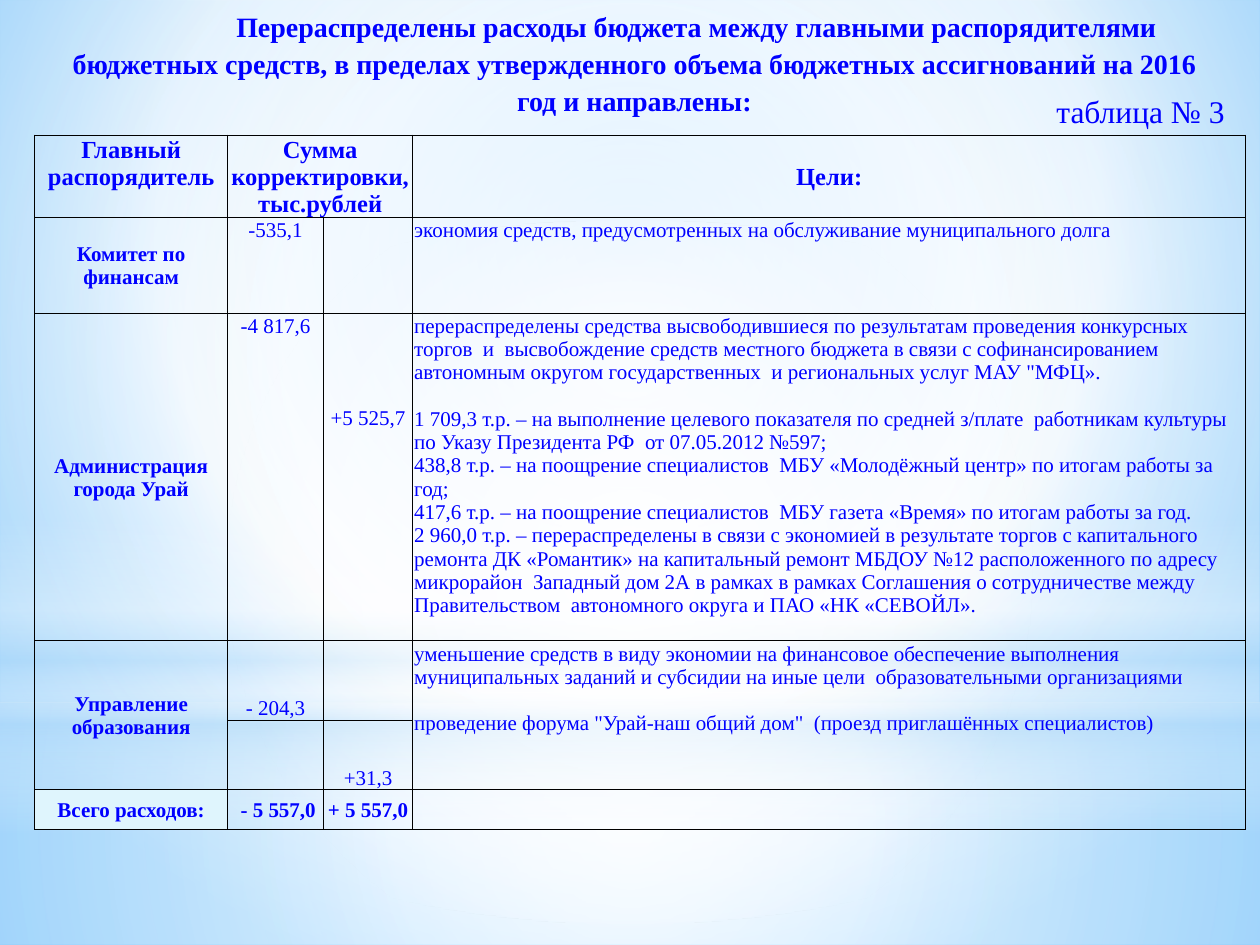
from lxml import etree
from pptx import Presentation
from pptx.dml.color import RGBColor
from pptx.enum import shapes, text
from pptx.oxml.ns import qn
from pptx.util import Cm, Pt

HUE = {"text": "0000FF", "line": "000000", "total": "DFF5FD", "white": "FFFFFF",
       "pale": "B4DCFA", "sky": "9ED5FF", "deep": "5BB9FF"}
BASE = {"name": "Times New Roman", "size": Pt(12), "bold": False}
TOP, MID, LOW = (text.MSO_ANCHOR.TOP, text.MSO_ANCHOR.MIDDLE,
                 text.MSO_ANCHOR.BOTTOM)
LEFT, MITTE, RIGHT = text.PP_ALIGN.LEFT, text.PP_ALIGN.CENTER, text.PP_ALIGN.RIGHT


def shade(fill, stops, rect=None):
    """Gradient with opacity per stop: round into rect, or downwards without it."""
    fill.gradient()
    grad = fill._xPr.find(qn("a:gradFill"))
    grad.clear()
    grad.set("rotWithShape", "1")
    gslst = etree.SubElement(grad, qn("a:gsLst"))
    for pos, hue, alpha in stops:
        stop = etree.SubElement(gslst, qn("a:gs"), pos=str(pos * 1000))
        clr = etree.SubElement(stop, qn("a:srgbClr"), val=HUE[hue])
        if alpha < 100:
            etree.SubElement(clr, qn("a:alpha"), val=str(alpha * 1000))
    if rect:
        way = etree.SubElement(grad, qn("a:path"))
        way.set("path", "circle")
        sides = {side: str(val * 1000) for side, val in zip("ltrb", rect)}
        etree.SubElement(way, qn("a:fillToRect"), **sides)
    else:
        etree.SubElement(grad, qn("a:lin"), ang="5400000", scaled="0")


def write(frame, lines, align, **style):
    """Write paragraphs; a line starting with a tuple gets space before it."""
    frame.word_wrap = True
    for num, line in enumerate(lines):
        para = frame.paragraphs[0] if num == 0 else frame.add_paragraph()
        para.alignment = align
        if isinstance(line, tuple):
            gap, line = line
            para.space_before = Pt(gap)
        run = para.add_run()
        run.text = line
        for key, val in {**BASE, **style}.items():
            setattr(run.font, key, val)
        run.font.color.rgb = RGBColor.from_string(HUE["text"])


deck = Presentation()
deck.slide_width, deck.slide_height = Cm(25.4), Cm(19.05)
slide = deck.slides.add_slide(deck.slide_layouts[5])

# Background and its light layers
shade(slide.background.fill,
      [(0, "sky", 100), (60, "white", 100), (100, "deep", 100)], (20, 10, 20, 60))
BOX, OVAL = shapes.MSO_SHAPE.RECTANGLE, shapes.MSO_SHAPE.OVAL
MIDDLE = (50, 50, 50, 50)
layers = [
    (BOX, 14.17, 4.88, MIDDLE,
     [(0, "white", 91), (37, "white", 76), (100, "pale", 79)]),
    (BOX, 0, 14.17, MIDDLE,
     [(0, "white", 89), (48, "white", 62), (100, "pale", 79)]),
    (BOX, 10.46, 6.35, None,
     [(0, "white", 0), (29, "white", 30), (45, "pale", 40),
      (55, "white", 26), (65, "pale", 60), (100, "white", 0)]),
    (OVAL, 4.45, 14.17, MIDDLE, [(0, "white", 100), (56, "white", 0)]),
]
for kind, top, high, rect, stops in layers:
    layer = slide.shapes.add_shape(kind, 0, Cm(top), deck.slide_width, Cm(high))
    layer.shadow.inherit = False
    layer.line.fill.background()
    shade(layer.fill, stops, rect)

# Table grid
cols = [3.89, 1.93, 1.8, 16.79]
rows = [1.65, 1.92, 6.61, 1.6, 1.4, 0.76]
grid = slide.shapes.add_table(len(rows), len(cols), Cm(0.7), Cm(2.72),
                              Cm(sum(cols)), Cm(sum(rows))).table
grid.first_row = grid.horz_banding = False
for col, wide in zip(grid.columns, cols):
    col.width = Cm(wide)
for row, high in zip(grid.rows, rows):
    row.height = Cm(high)
for cell in grid.iter_cells():
    for side in ("left", "right", "top"):
        setattr(cell, "margin_" + side, Cm(0.03))
    cell.margin_bottom = 0
    cell.fill.background()
    props = cell._tc.get_or_add_tcPr()
    for spot, tag in enumerate(("a:lnL", "a:lnR", "a:lnT", "a:lnB")):
        edge = etree.Element(qn(tag), w=str(Pt(0.5)))
        ink = etree.SubElement(edge, qn("a:solidFill"))
        etree.SubElement(ink, qn("a:srgbClr"), val=HUE["line"])
        props.insert(spot, edge)
for first, last in (((0, 1), (0, 2)), ((3, 0), (4, 0)), ((3, 3), (4, 3))):
    grid.cell(*first).merge(grid.cell(*last))
total = grid.cell(5, 0).fill
total.solid()
total.fore_color.rgb = RGBColor.from_string(HUE["total"])

# Headings, names and sums: row, column, anchor, size, bold, text
marks = [
    (0, 0, TOP, 14, True, "Главный распорядитель"),
    (0, 1, MID, 14, True, "Сумма корректировки, тыс.рублей"),
    (0, 3, MID, 14, True, "Цели:"),
    (1, 0, MID, 12, True, "Комитет по финансам"),
    (1, 1, TOP, 12, False, "-535,1"),
    (2, 0, MID, 12, True, "Администрация города Урай"),
    (2, 1, TOP, 12, False, "-4 817,6"),
    (2, 2, TOP, 12, False, "+5 525,7"),
    (3, 0, MID, 12, True, "Управление образования"),
    (3, 1, LOW, 12, False, "- 204,3"),
    (4, 2, LOW, 12, False, "+31,3"),
    (5, 0, MID, 12, True, "Всего расходов:"),
    (5, 1, MID, 12, True, " - 5 557,0"),
    (5, 2, MID, 12, True, "+ 5 557,0"),
]
for row, col, anchor, size, bold, words in marks:
    cell = grid.cell(row, col)
    cell.vertical_anchor = anchor
    write(cell.text_frame, [words], MITTE, size=Pt(size), bold=bold)
grid.cell(2, 2).margin_top = Cm(1.9)  # level with the second goal

# Goals
goals = {
    1: ["экономия средств, предусмотренных на обслуживание муниципального долга"],
    2: ["перераспределены средства высвободившиеся по результатам проведения "
        "конкурсных торгов  и  высвобождение средств местного бюджета в связи с "
        "софинансированием  автономным округом государственных  и региональных "
        "услуг МАУ \"МФЦ».",
        (13.3, "1 709,3 т.р. – на выполнение целевого показателя по средней з/плате  "
         "работникам культуры по Указу Президента РФ  от 07.05.2012 №597;"),
        "438,8 т.р. – на поощрение специалистов  МБУ «Молодёжный центр» по итогам "
        "работы за год;",
        "417,6 т.р. – на поощрение специалистов  МБУ газета «Время» по итогам "
        "работы за год.",
        "2 960,0 т.р. – перераспределены в связи с экономией в результате торгов с "
        "капитального ремонта ДК «Романтик» на капитальный ремонт МБДОУ №12 "
        "расположенного по адресу микрорайон  Западный дом 2А в рамках в рамках "
        "Соглашения о сотрудничестве между Правительством  автономного округа и "
        "ПАО «НК «СЕВОЙЛ»."],
    3: ["уменьшение средств в виду экономии на финансовое обеспечение выполнения "
        "муниципальных заданий и субсидии на иные цели  образовательными "
        "организациями",
        (13.3, "проведение форума \"Урай-наш общий дом\"  (проезд приглашённых "
         "специалистов)")],
}
for row, lines in goals.items():
    write(grid.cell(row, 3).text_frame, lines, LEFT)

# Table number
note = slide.shapes.add_textbox(Cm(21), Cm(1.73), Cm(3.94), Cm(1.02))
write(note.text_frame, ["таблица № 3"], RIGHT, size=Pt(18))

# Title, in front of the layers
title = slide.shapes.title
slide.shapes._spTree.append(title._element)
title.left, title.top, title.width, title.height = Cm(0.89), 0, Cm(23.8), Cm(3.84)
title.text_frame.vertical_anchor = TOP
write(title.text_frame,
      ["Перераспределены расходы бюджета между главными распорядителями бюджетных "
       "средств, в пределах утвержденного объема бюджетных ассигнований на 2016 год "
       "и направлены:"], MITTE, size=Pt(16), bold=True)
head = title.text_frame.paragraphs[0]
head.line_spacing = 1.1
head._p.get_or_add_pPr().set("indent", str(Cm(2.5)))

deck.save("out.pptx")
